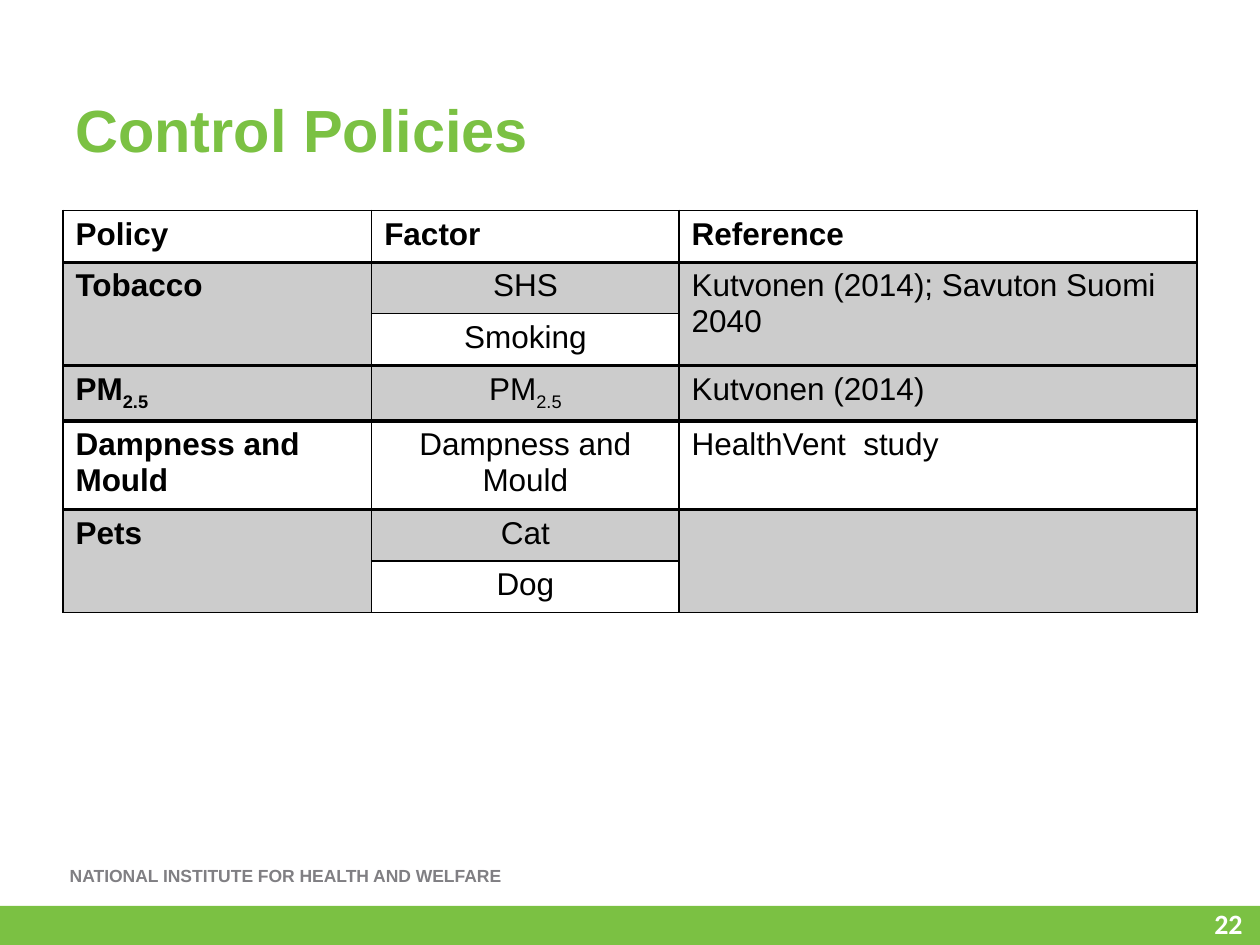
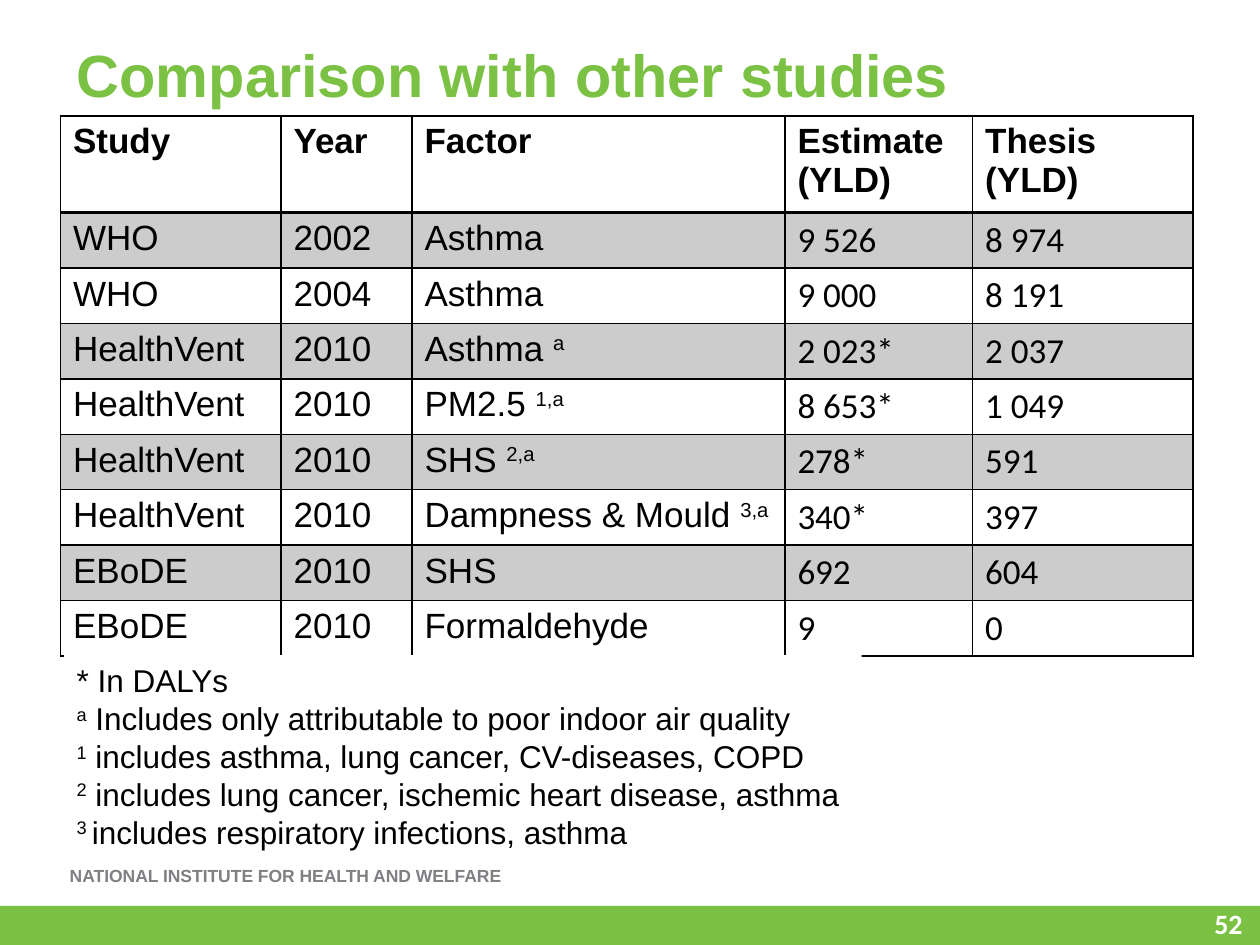
from dataclasses import dataclass

from lxml.etree import SubElement
from pptx import Presentation
from pptx.dml.color import RGBColor
from pptx.enum.shapes import MSO_SHAPE
from pptx.enum.text import MSO_ANCHOR, MSO_AUTO_SIZE, PP_ALIGN
from pptx.oxml.ns import qn
from pptx.util import Inches, Pt


@dataclass(frozen=True)
class Theme:
    green: str = "7BC143"
    grey: str = "807F83"
    shade: str = "CCCCCC"
    black: str = "000000"
    white: str = "FFFFFF"
    sans: str = "Arial"
    numeric: str = "Calibri"
    title: int = 34
    table_large: int = 20
    body: int = 18
    number: int = 16
    footer: int = 10


THEME = Theme()
COLS, ROWS = 100, 75
SLIDE_W, SLIDE_H = Inches(10), Inches(7.5)
SHIFTS = {"^": "30000", "_": "-25000"}

POLICIES = [
    ["Policy", "Factor", "Reference"],
    ["Tobacco", "SHS", "Kutvonen (2014); Savuton Suomi 2040"],
    [None, "Smoking", None],
    ["PM|_2.5", "PM|_2.5", "Kutvonen (2014)"],
    ["Dampness and Mould", "Dampness and Mould", "HealthVent  study"],
    ["Pets", "Cat", ""],
    [None, "Dog", None],
]
STUDIES = [
    ["Study", "Year", "Factor", "Estimate (YLD)", "Thesis (YLD)"],
    ["WHO", "2002", "Asthma", "9 526", "8 974"],
    ["WHO", "2004", "Asthma", "9 000", "8 191"],
    ["HealthVent", "2010", "Asthma |^a", "2 023*", "2 037"],
    ["HealthVent", "2010", "PM2.5 |^1,a", "8 653*", "1 049"],
    ["HealthVent", "2010", "SHS |^2,a", "278*", "591"],
    ["HealthVent", "2010", "Dampness & Mould |^3,a", "340*", "397"],
    ["EBoDE", "2010", "SHS", "692", "604"],
    ["EBoDE", "2010", "Formaldehyde", "9", "0"],
]
FOOTNOTES = [
    "* In DALYs",
    "^a| Includes only attributable to poor indoor air quality",
    "^1| includes asthma, lung cancer, CV-diseases, COPD",
    "^2| includes lung cancer, ischemic heart disease, asthma",
    "^3 |includes respiratory infections, asthma",
]


def across(n):
    return int(SLIDE_W * n / COLS)


def down(n):
    return int(SLIDE_H * n / ROWS)


def area(box):
    x, y, w, h = box
    return across(x), down(y), across(w), down(h)


def write(p, text, size, color=THEME.black, font=THEME.sans, bold=False, align=PP_ALIGN.LEFT):
    p.alignment = align
    for chunk in text.split("|"):
        shift = SHIFTS.get(chunk[:1])
        r = p.add_run()
        r.text = chunk[1:] if shift else chunk
        r.font.size = Pt(size)
        r.font.name = font
        r.font.bold = bold
        r.font.color.rgb = RGBColor.from_string(color)
        if shift:
            r.font._element.set("baseline", shift)


def add_rect(s, box, color):
    sp = s.shapes.add_shape(MSO_SHAPE.RECTANGLE, *area(box))
    sp.shadow.inherit = False
    sp.fill.solid()
    sp.fill.fore_color.rgb = RGBColor.from_string(color)
    sp.line.fill.background()
    sp.text_frame.vertical_anchor = MSO_ANCHOR.TOP
    sp.text_frame.word_wrap = False
    return sp


def add_footer(s, number):
    add_rect(s, (0, 71.9, 100, 3.1), THEME.green)
    sp = add_rect(s, (4.1, 68.2, 37.1, 2.7), THEME.white)
    write(sp.text_frame.paragraphs[0], "NATIONAL INSTITUTE FOR HEALTH AND WELFARE",
          THEME.footer, THEME.grey, bold=True, align=PP_ALIGN.CENTER)
    tf = s.shapes.add_textbox(*area((93.8, 72, 5.8, 2.5))).text_frame
    tf.word_wrap = True
    tf.vertical_anchor = MSO_ANCHOR.MIDDLE
    write(tf.paragraphs[0], number, THEME.number, THEME.white, THEME.numeric, True, PP_ALIGN.RIGHT)


def add_title(s, box, text):
    sp = s.shapes.title
    sp.left, sp.top, sp.width, sp.height = area(box)
    tf = sp.text_frame
    tf.auto_size = MSO_AUTO_SIZE.NONE
    tf.vertical_anchor = MSO_ANCHOR.BOTTOM
    p = tf.paragraphs[0]
    p.line_spacing = 0.85
    write(p, text, THEME.title, THEME.green, bold=True)


def set_borders(cell, top, bottom):
    tcPr = cell._tc.get_or_add_tcPr()
    for side, width in (("L", 1), ("R", 1), ("T", top), ("B", bottom)):
        ln = SubElement(tcPr, qn(f"a:ln{side}"), w=str(Pt(width)))
        fill = SubElement(ln, qn("a:solidFill"))
        SubElement(fill, qn("a:srgbClr"), val=THEME.black)


def add_grid_table(s, corner, data, widths, heights, rules, size,
                   bold_cols=(), centred_cols=(), numeric_cols=()):
    box = (*corner, sum(widths), sum(heights))
    table = s.shapes.add_table(len(data), len(widths), *area(box)).table
    table.horz_banding = False
    for col, w in zip(table.columns, widths):
        col.width = across(w)
    for row, h in zip(table.rows, heights):
        row.height = down(h)
    for i, values in enumerate(data):
        for j, text in enumerate(values):
            if text is None:
                table.cell(i - 1, j).merge(table.cell(i, j))
    for i, values in enumerate(data):
        for j, text in enumerate(values):
            cell = table.cell(i, j)
            last = i + cell.span_height - 1 if cell.is_merge_origin else i
            set_borders(cell, rules[i - 1] if i else 1, rules[last])
            shaded = i % 2 == 1 or text is None
            cell.fill.solid()
            cell.fill.fore_color.rgb = RGBColor.from_string(THEME.shade if shaded else THEME.white)
            if text:
                header = i == 0
                write(cell.text_frame.paragraphs[0], text, size,
                      font=THEME.numeric if j in numeric_cols and not header else THEME.sans,
                      bold=header or j in bold_cols,
                      align=PP_ALIGN.CENTER if j in centred_cols and not header else PP_ALIGN.LEFT)


def add_footnotes(s, box, notes):
    tf = add_rect(s, box, THEME.white).text_frame
    for i, note in enumerate(notes):
        p = tf.add_paragraph() if i else tf.paragraphs[0]
        write(p, note, THEME.body)


def new_slide(prs, title_box, title, number):
    s = prs.slides.add_slide(prs.slide_layouts[5])
    add_footer(s, number)
    add_title(s, title_box, title)
    return s


def policies_slide(prs):
    s = new_slide(prs, (5, 3.3, 90, 10.3), "Control Policies", "22")
    add_grid_table(s, (5, 16.7), POLICIES, [24.5, 24.4, 41.1], [4.1] * 4 + [6.7] + [4.1] * 2,
                   [2, 1, 2.25, 2.25, 2.25, 1, 1], THEME.body, bold_cols=(0,), centred_cols=(1,))


def studies_slide(prs):
    s = new_slide(prs, (5.1, 0, 90, 9.2), "Comparison with other studies", "52")
    add_grid_table(s, (4.8, 9.2), STUDIES, [17.5, 10.4, 29.6, 14.9, 17.5], [7.5] + [4.4] * 8,
                   [2] + [1] * 8, THEME.table_large, numeric_cols=(3, 4))
    add_footnotes(s, (5.1, 52, 63.3, 16.2), FOOTNOTES)


def main():
    prs = Presentation()
    prs.slide_width, prs.slide_height = SLIDE_W, SLIDE_H
    policies_slide(prs)
    studies_slide(prs)
    prs.save("out.pptx")


if __name__ == "__main__":
    main()
